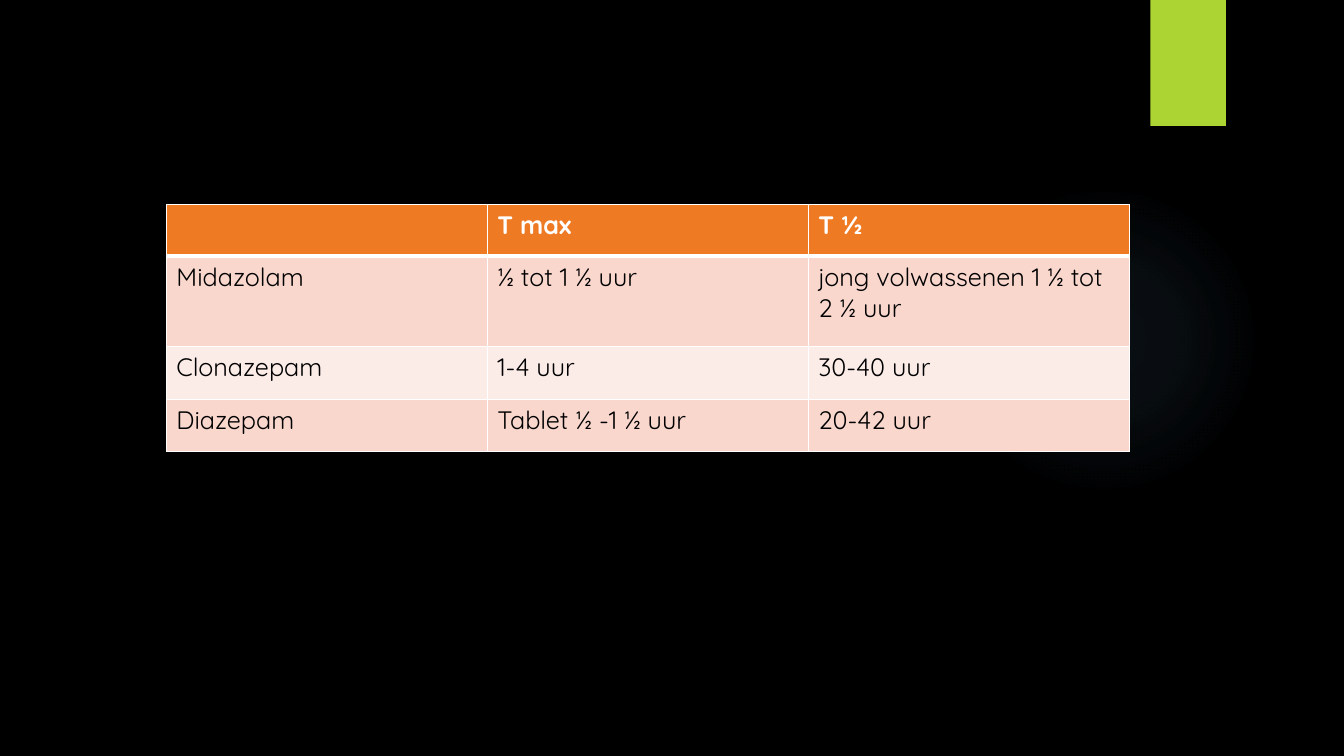
from pptx import Presentation
from pptx.dml.color import RGBColor
from pptx.enum.shapes import MSO_SHAPE
from pptx.oxml import parse_xml
from pptx.oxml.ns import nsdecls, qn
from pptx.util import Inches, Pt

OVAL, RECTANGLE = MSO_SHAPE.OVAL, MSO_SHAPE.RECTANGLE
FONT = "Quicksand"
COLORS = {
    "background": "000000",
    "glow": "7AC4F0",
    "tab": "ACD433",
    "header": "EF7A24",
    "odd_row": "F9D7CD",
    "even_row": "FCECE8",
    "header_text": "FFFFFF",
    "body_text": "000000",
    "border": "FFFFFF",
}


def rgb(name):
    return RGBColor.from_string(COLORS[name])


def add_border(cell, side, points):
    cell._tc.get_or_add_tcPr().append(parse_xml(
        f'<a:ln{side} {nsdecls("a")} w="{Pt(points)}"><a:solidFill>'
        f'<a:srgbClr val="{COLORS["border"]}"/></a:solidFill></a:ln{side}>'))


prs = Presentation()
prs.slide_width, prs.slide_height = Inches(13.33), Inches(7.5)
slide = prs.slides.add_slide(prs.slide_layouts[6])
slide.background.fill.solid()
slide.background.fill.fore_color.rgb = rgb("background")

# Soft glow: a radial gradient that fades out
glow = slide.shapes.add_shape(OVAL, Inches(9.41), Inches(1.83), Inches(3.08), Inches(3.08))
glow.shadow.inherit = False
glow.line.fill.background()
glow.fill.background()
stops = "".join(
    f'<a:gs pos="{position * 1000}"><a:srgbClr val="{COLORS["glow"]}">'
    f'<a:alpha val="{opacity * 1000}"/></a:srgbClr></a:gs>'
    for position, opacity in [(0, 7), (36, 6), (69, 0), (100, 0)])
glow_properties = glow._element.spPr
glow_properties.replace(glow_properties.find(qn("a:noFill")), parse_xml(
    f'<a:gradFill {nsdecls("a")}><a:gsLst>{stops}</a:gsLst><a:path path="circle">'
    '<a:fillToRect l="50000" t="50000" r="50000" b="50000"/></a:path></a:gradFill>'))

# Green tab at the top edge
tab = slide.shapes.add_shape(RECTANGLE, Inches(11.41), 0, Inches(0.75), Inches(1.25))
tab.shadow.inherit = False
tab.line.fill.background()
tab.fill.solid()
tab.fill.fore_color.rgb = rgb("tab")

# Table of peak times and half-lives
medicines = [
    ("", "T max", "T ½"),
    ("Midazolam", "½ tot 1 ½ uur", "jong volwassenen 1 ½ tot 2 ½ uur"),
    ("Clonazepam", "1-4 uur", "30-40 uur"),
    ("Diazepam", "Tablet ½ -1 ½ uur", "20-42 uur"),
]
row_heights = [0.51, 0.9, 0.52, 0.52]
table = slide.shapes.add_table(
    len(medicines), 3, Inches(1.65), Inches(2.03), Inches(9.55), Inches(sum(row_heights))).table

for row_index, (values, height) in enumerate(zip(medicines, row_heights)):
    is_header = row_index == 0
    row_fill = "header" if is_header else "odd_row" if row_index % 2 else "even_row"
    table.rows[row_index].height = Inches(height)
    for cell, value in zip(table.rows[row_index].cells, values):
        add_border(cell, "L", 1)
        add_border(cell, "R", 1)
        add_border(cell, "T", 3 if row_index == 1 else 1)
        add_border(cell, "B", 3 if is_header else 1)
        cell.fill.solid()
        cell.fill.fore_color.rgb = rgb(row_fill)
        cell.text = value
        font = cell.text_frame.paragraphs[0].font
        font.name, font.size, font.bold = FONT, Pt(18), is_header
        font.color.rgb = rgb("header_text" if is_header else "body_text")

prs.save("out.pptx")
